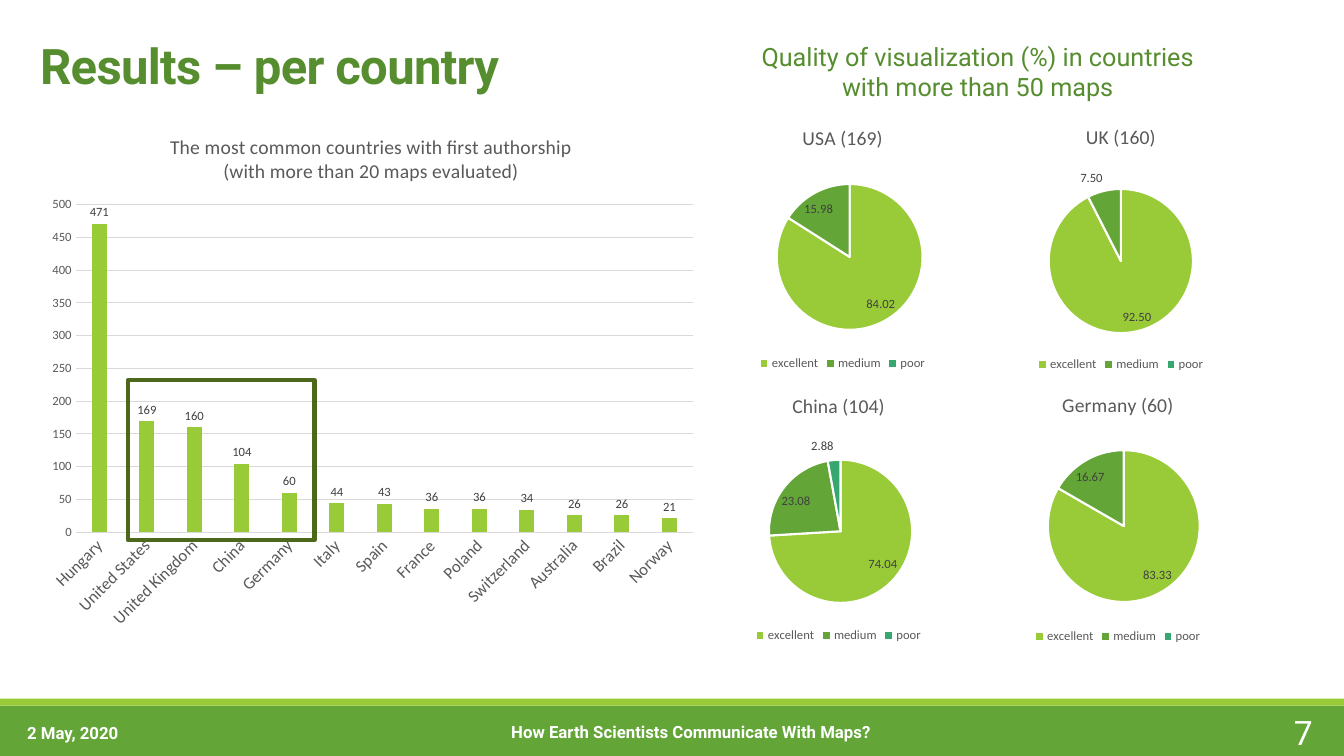
from dataclasses import dataclass

from pptx import Presentation
from pptx.chart.chart import Chart
from pptx.chart.data import CategoryChartData
from pptx.dml.color import RGBColor
from pptx.enum.chart import XL_CHART_TYPE, XL_LABEL_POSITION, XL_LEGEND_POSITION, XL_TICK_MARK
from pptx.enum.shapes import MSO_SHAPE
from pptx.enum.text import MSO_ANCHOR, PP_ALIGN
from pptx.oxml import parse_xml
from pptx.oxml.ns import nsdecls
from pptx.util import Inches, Pt

COLUMN, PIE = XL_CHART_TYPE.COLUMN_CLUSTERED, XL_CHART_TYPE.PIE
OUTSIDE_END, BEST_FIT = XL_LABEL_POSITION.OUTSIDE_END, XL_LABEL_POSITION.BEST_FIT
LEGEND_BOTTOM = XL_LEGEND_POSITION.BOTTOM
NO_TICK = XL_TICK_MARK.NONE
RECTANGLE = MSO_SHAPE.RECTANGLE
LEFT, CENTER, RIGHT = PP_ALIGN.LEFT, PP_ALIGN.CENTER, PP_ALIGN.RIGHT
TOP, MIDDLE, BOTTOM = MSO_ANCHOR.TOP, MSO_ANCHOR.MIDDLE, MSO_ANCHOR.BOTTOM

WHITE = RGBColor(0xFF, 0xFF, 0xFF)
BLACK = RGBColor(0x00, 0x00, 0x00)
LIME = RGBColor(0x99, 0xCB, 0x38)
GREEN = RGBColor(0x63, 0xA5, 0x37)
TEAL = RGBColor(0x37, 0xA7, 0x6F)
HEADING_GREEN = RGBColor(0x55, 0x8D, 0x2F)
FRAME_GREEN = RGBColor(0x4D, 0x67, 0x1B)
TEXT_GRAY = RGBColor(0x59, 0x59, 0x59)
LABEL_GRAY = RGBColor(0x40, 0x40, 0x40)
GRID_GRAY = RGBColor(0xD9, 0xD9, 0xD9)

TEXT_FONT, CHART_FONT = "Roboto", "Calibri"
QUALITY_COLORS = {"excellent": LIME, "medium": GREEN, "poor": TEAL}
MAPS_BY_COUNTRY = {
    "Hungary": 471, "United States": 169, "United Kingdom": 160, "China": 104,
    "Germany": 60, "Italy": 44, "Spain": 43, "France": 36, "Poland": 36,
    "Switzerland": 34, "Australia": 26, "Brazil": 26, "Norway": 21,
}

presentation = Presentation()
presentation.slide_width, presentation.slide_height = Inches(13.33), Inches(7.5)
slide = presentation.slides.add_slide(presentation.slide_layouts[6])


@dataclass(frozen=True)
class Area:
    """Left, top, width and height as percentages of the slide."""
    left: float
    top: float
    width: float
    height: float

    def lengths(self) -> tuple[int, int, int, int]:
        column, row = presentation.slide_width / 100, presentation.slide_height / 100
        return (int(self.left * column), int(self.top * row),
                int(self.width * column), int(self.height * row))


@dataclass(frozen=True)
class Label:
    text: str
    area: Area
    size: float
    color: RGBColor = WHITE
    bold: bool = False
    alignment: PP_ALIGN = LEFT
    anchor: MSO_ANCHOR = MIDDLE
    line_spacing: float = 1.0
    tracking: int = 0


@dataclass(frozen=True)
class ChartPanel:
    title: str
    area: Area
    plot: tuple[float, float, float, float]
    values: dict[str, float]


def quality(excellent: float, medium: float, poor: float) -> dict[str, float]:
    return dict(zip(QUALITY_COLORS, (excellent, medium, poor)))


BANDS = [(Area(0, 93.33, 100, 6.67), GREEN), (Area(0, 92.4, 100, 0.93), LIME)]
LABELS = [
    Label("Results – per country", Area(2.25, 3.6, 96.07, 9.6), 35, HEADING_GREEN,
          bold=True, anchor=BOTTOM, line_spacing=0.85, tracking=-50),
    Label("2 May, 2020", Area(1.28, 94.27, 15.23, 5.33), 12, bold=True),
    Label("How Earth Scientists Communicate With Maps?", Area(29.48, 95.4, 43.88, 2.8),
          12, bold=True, alignment=CENTER),
    Label("7", Area(87.68, 94.13, 10.73, 5.33), 24, alignment=RIGHT),
    Label("Quality of visualization (%) in countries\nwith more than 50 maps",
          Area(54.75, 4.8, 36, 9.47), 18, HEADING_GREEN, alignment=CENTER, anchor=TOP),
]
COUNTRY_PANEL = ChartPanel(
    "The most common countries with first authorship\n(with more than 20 maps evaluated)",
    Area(2.63, 15.2, 49.95, 69.87), (0.06, 0.17, 0.92, 0.62), MAPS_BY_COUNTRY)
QUALITY_PANELS = [
    ChartPanel("USA (169)", Area(49.65, 14.53, 26.1, 35.07),
               (0.31, 0.28, 0.42, 0.55), quality(84.02, 15.98, 0)),
    ChartPanel("UK (160)", Area(71.1, 14.4, 24.6, 35.33),
               (0.28, 0.3, 0.44, 0.54), quality(92.5, 7.5, 0)),
    ChartPanel("China (104)", Area(48, 50, 28.8, 35.6),
               (0.32, 0.3, 0.37, 0.54), quality(74.04, 23.08, 2.88)),
    ChartPanel("Germany (60)", Area(72.23, 49.87, 21.9, 35.87),
               (0.26, 0.27, 0.52, 0.56), quality(83.33, 16.67, 0)),
]
HIGHLIGHT = Area(9.53, 50.27, 13.88, 21.2)


def style_font(font, name: str, size: float, color: RGBColor, bold: bool = False) -> None:
    font.name, font.size, font.bold = name, Pt(size), bold
    font.color.rgb = color


def add_band(area: Area, color: RGBColor) -> None:
    shape = slide.shapes.add_shape(RECTANGLE, *area.lengths())
    shape.shadow.inherit = False
    shape.fill.solid()
    shape.fill.fore_color.rgb = color
    shape.line.fill.background()


def add_label(label: Label) -> None:
    text_frame = slide.shapes.add_textbox(*label.area.lengths()).text_frame
    text_frame.word_wrap = True
    text_frame.vertical_anchor = label.anchor
    text_frame.text = label.text
    for paragraph in text_frame.paragraphs:
        paragraph.alignment = label.alignment
        paragraph.line_spacing = label.line_spacing
        for run in paragraph.runs:
            style_font(run.font, TEXT_FONT, label.size, label.color, label.bold)
            if label.tracking:
                run.font._element.set("spc", str(label.tracking))


def place_plot(chart: Chart, plot: tuple[float, float, float, float]) -> None:
    plot_area = chart.element.xpath("c:chart/c:plotArea")[0]
    for layout in plot_area.xpath("c:layout"):
        plot_area.remove(layout)
    modes = '<c:layoutTarget val="inner"/><c:xMode val="edge"/><c:yMode val="edge"/>'
    sizes = "".join(f'<c:{key} val="{share}"/>' for key, share in zip("xywh", plot))
    plot_area.insert(0, parse_xml(
        f'<c:layout {nsdecls("c")}><c:manualLayout>{modes}{sizes}</c:manualLayout></c:layout>'))


def add_chart(panel: ChartPanel, kind: XL_CHART_TYPE, number_format: str,
              label_position: XL_LABEL_POSITION) -> Chart:
    chart_data = CategoryChartData()
    chart_data.categories = list(panel.values)
    chart_data.add_series("Series 1", list(panel.values.values()))
    chart = slide.shapes.add_chart(kind, *panel.area.lengths(), chart_data).chart
    style_font(chart.font, CHART_FONT, 10, BLACK)
    chart.has_legend = False
    chart.has_title = True
    chart.chart_title.include_in_layout = False
    chart.chart_title.text_frame.text = panel.title
    for paragraph in chart.chart_title.text_frame.paragraphs:
        for run in paragraph.runs:
            style_font(run.font, CHART_FONT, 14, TEXT_GRAY)
    data_labels = chart.plots[0].series[0].data_labels
    data_labels.show_value = True
    data_labels.number_format, data_labels.number_format_is_linked = number_format, False
    data_labels.position = label_position
    style_font(data_labels.font, CHART_FONT, 9, LABEL_GRAY)
    place_plot(chart, panel.plot)
    return chart


def add_country_chart(panel: ChartPanel) -> None:
    chart = add_chart(panel, COLUMN, "General", OUTSIDE_END)
    plot = chart.plots[0]
    plot.vary_by_categories = False
    plot.gap_width, plot.overlap = 219, -27
    plot.series[0].format.fill.solid()
    plot.series[0].format.fill.fore_color.rgb = LIME
    for axis, size in ((chart.category_axis, 12), (chart.value_axis, 9)):
        axis.major_tick_mark = axis.minor_tick_mark = NO_TICK
        style_font(axis.tick_labels.font, CHART_FONT, size, TEXT_GRAY)
    chart.element.xpath("//c:catAx/c:txPr/a:bodyPr")[0].set("rot", "-2700000")
    value_axis = chart.value_axis
    value_axis.minimum_scale, value_axis.maximum_scale, value_axis.major_unit = 0, 500, 50
    value_axis.format.line.fill.background()
    for line in (chart.category_axis.format.line, value_axis.major_gridlines.format.line):
        line.color.rgb, line.width = GRID_GRAY, Pt(0.75)


def add_quality_chart(panel: ChartPanel) -> None:
    chart = add_chart(panel, PIE, "0.00", BEST_FIT)
    chart.has_legend = True
    chart.legend.position = LEGEND_BOTTOM
    chart.legend.include_in_layout = False
    style_font(chart.legend.font, CHART_FONT, 9, TEXT_GRAY)
    chart.plots[0].vary_by_categories = True
    series = chart.plots[0].series[0]
    for index, (category, value) in enumerate(panel.values.items()):
        slice_format = series.points[index].format
        slice_format.fill.solid()
        slice_format.fill.fore_color.rgb = QUALITY_COLORS[category]
        slice_format.line.color.rgb, slice_format.line.width = WHITE, Pt(1.5)
        if value == 0:
            chart.element.xpath("//c:ser/c:dLbls")[0].insert(0, parse_xml(
                f'<c:dLbl {nsdecls("c")}><c:idx val="{index}"/><c:delete val="1"/></c:dLbl>'))


def add_highlight(area: Area) -> None:
    shape = slide.shapes.add_shape(RECTANGLE, *area.lengths())
    shape.shadow.inherit = False
    shape.fill.background()
    shape.line.color.rgb, shape.line.width = FRAME_GREEN, Pt(3)


for band_area, band_color in BANDS:
    add_band(band_area, band_color)
for slide_label in LABELS:
    add_label(slide_label)
add_country_chart(COUNTRY_PANEL)
for quality_panel in QUALITY_PANELS:
    add_quality_chart(quality_panel)
add_highlight(HIGHLIGHT)
presentation.save("out.pptx")
